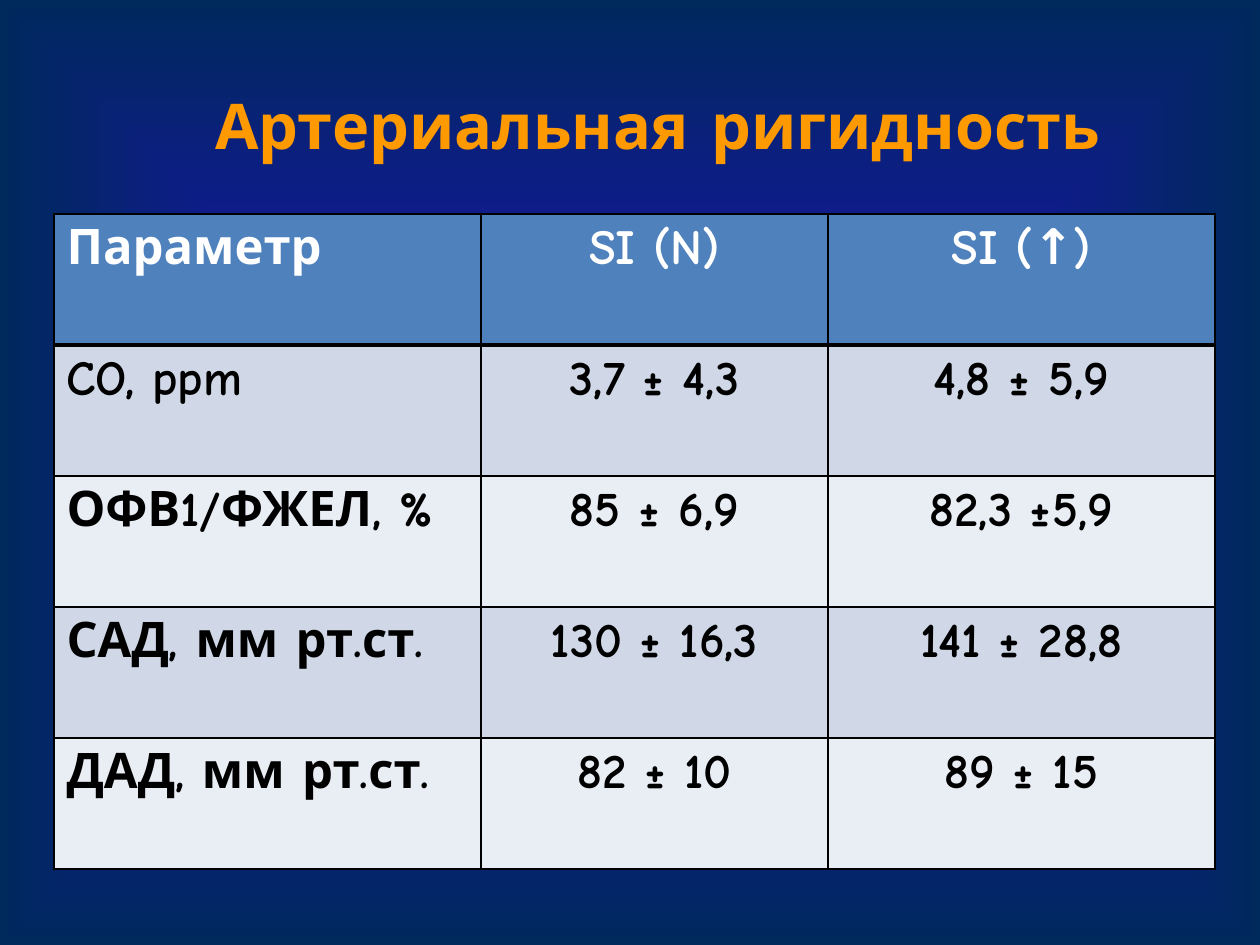
from pptx import Presentation, util as u
from pptx.dml import color
from pptx.enum import text
from pptx.oxml import ns, parse_xml

PX = 914400 / 126
FONT = "Comic Neue"


def px(n):
    return u.Emu(round(n * PX))


def style(p, size, hex_color, align):
    p.alignment = align
    for r in p.runs:
        r.font.name = FONT
        r.font.size = u.Pt(size)
        r.font.bold = True
        r.font.color.rgb = color.RGBColor.from_string(hex_color)


prs = Presentation()
prs.slide_width, prs.slide_height = px(1260), px(945)
s = prs.slides.add_slide(prs.slide_layouts[5])

# Background: gradient from the centre to the edges
fill = s.background.fill
fill.gradient()
for stop, hex_color in zip(fill.gradient_stops, ("210BC5", "00295C")):
    stop.color.rgb = color.RGBColor.from_string(hex_color)
lin = s.element.find(".//" + ns.qn("a:lin"))
lin.getparent().replace(lin, parse_xml(
    f'<a:path {ns.nsdecls("a")} path="shape">'
    '<a:fillToRect l="50000" t="50000" r="50000" b="50000"/></a:path>'))

# Title
title = s.shapes.title
title.left, title.top, title.width, title.height = px(154), px(45), px(1008), px(158)
tf = title.text_frame
tf.text = "Артериальная ригидность"
tf.vertical_anchor = text.MSO_ANCHOR.MIDDLE
style(tf.paragraphs[0], 36, "FF9900", text.PP_ALIGN.CENTER)

# Table
rows = [
    ("Параметр", "SI (N)", "SI (↑)"),
    ("CO, ppm", "3,7 ± 4,3", "4,8 ± 5,9"),
    ("ОФВ1/ФЖЕЛ, %", "85 ± 6,9", "82,3 ±5,9"),
    ("САД, мм рт.ст.", "130 ± 16,3", "141 ± 28,8"),
    ("ДАД, мм рт.ст.", "82 ± 10", "89 ± 15"),
]
widths = (427, 347, 387)
row_height = 131
table = s.shapes.add_table(len(rows), len(widths), px(54), px(214),
                           px(sum(widths)), px(row_height * len(rows))).table
for column, width in zip(table.columns, widths):
    column.width = px(width)

for i, row in enumerate(rows):
    table.rows[i].height = px(row_height)
    fill_hex = "4F81BD" if i == 0 else ("E9EDF4", "D0D8E8")[i % 2]
    for j, label in enumerate(row):
        cell = table.cell(i, j)
        cell.text_frame.text = label
        style(cell.text_frame.paragraphs[0], 28, "000000" if i else "FFFFFF",
              text.PP_ALIGN.CENTER if j else text.PP_ALIGN.LEFT)

        # Black borders, thicker under the header
        tc_pr = cell._tc.get_or_add_tcPr()
        for side in "LRTB":
            thick = (i, side) in ((0, "B"), (1, "T"))
            tc_pr.append(parse_xml(
                f'<a:ln{side} {ns.nsdecls("a")} w="{u.Pt(3 if thick else 1)}">'
                '<a:solidFill><a:srgbClr val="000000"/></a:solidFill>'
                f'</a:ln{side}>'))
        cell.fill.solid()
        cell.fill.fore_color.rgb = color.RGBColor.from_string(fill_hex)

prs.save("out.pptx")
